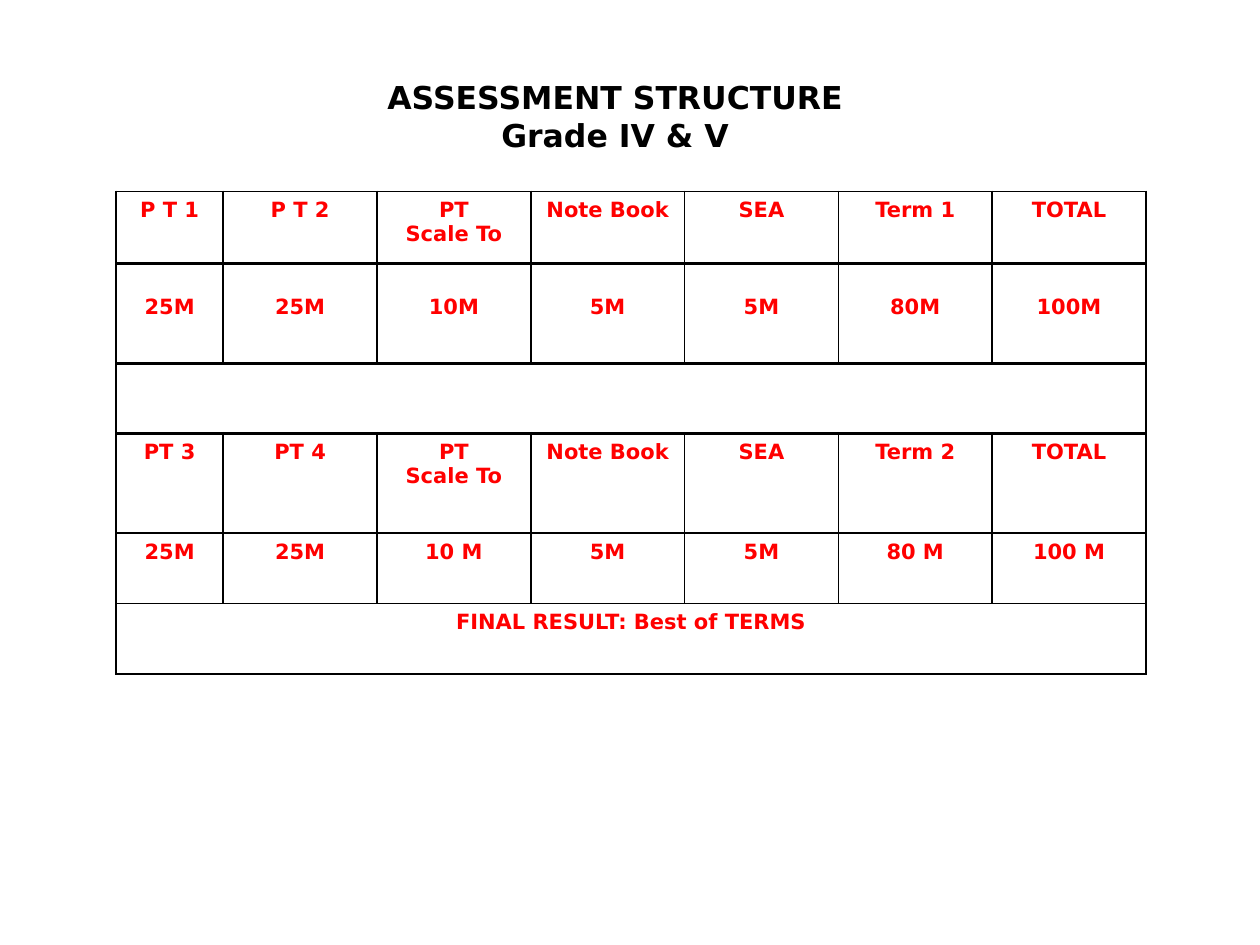
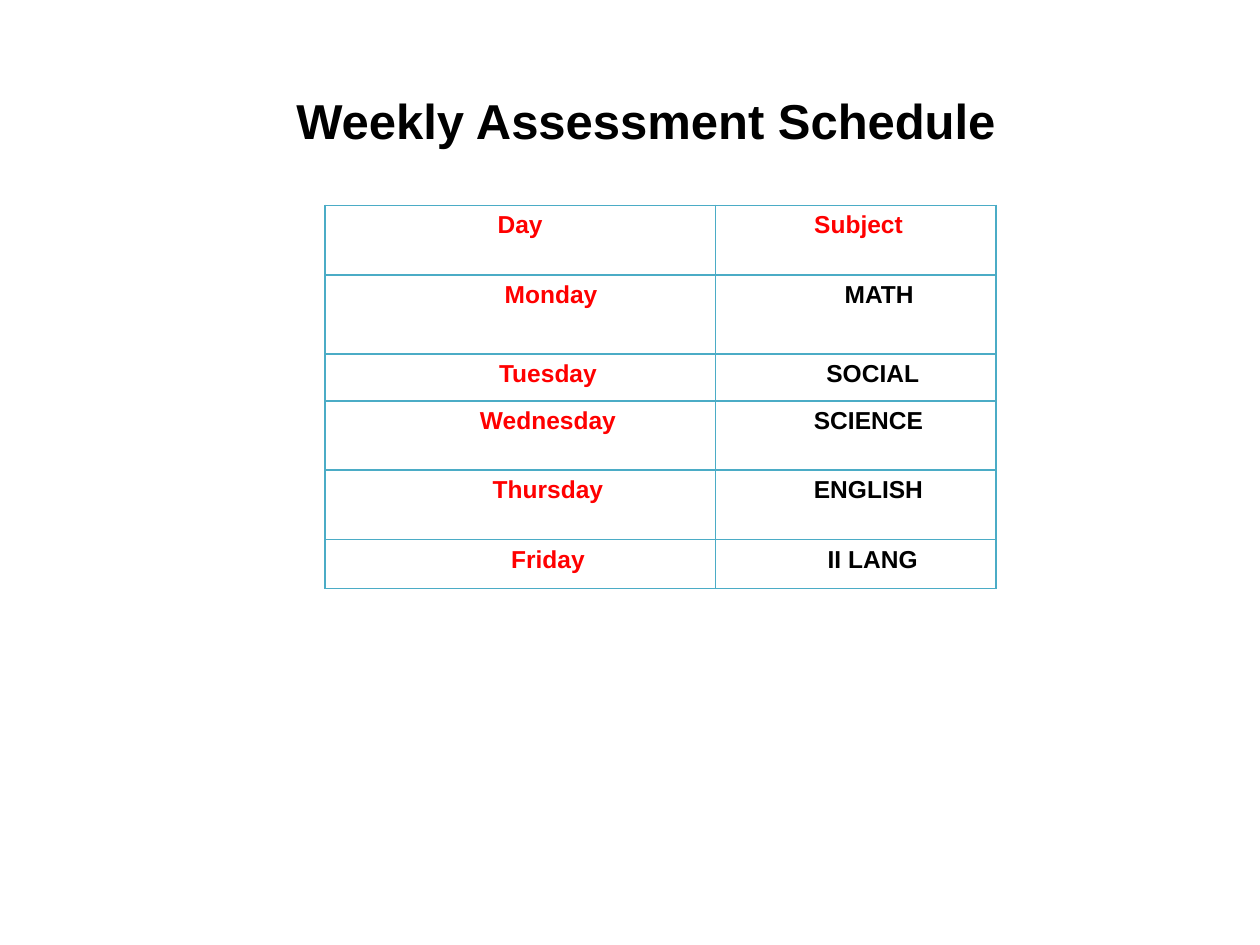
from lxml.etree import SubElement
from pptx import Presentation
from pptx.dml.color import RGBColor
from pptx.enum.text import PP_ALIGN as Align
from pptx.oxml.ns import qn
from pptx.util import Cm, Pt

BLACK, RED, TEAL = "000000", "FF0000", "4BACC6"
MARGIN = 0.25


def rgb(value):
    return RGBColor.from_string(value)


class Deck:
    def __init__(self):
        self.prs = Presentation()
        self.prs.slide_width, self.prs.slide_height = Cm(25.4), Cm(19.05)

    def new_slide(self, font):
        self.s = self.prs.slides.add_slide(self.prs.slide_layouts[6])
        self.font = font

    def set_text(self, tf, text, size, color):
        tf.text = text
        for p in tf.paragraphs:
            p.alignment = Align.CENTER
            for r in p.runs:
                r.font.name, r.font.size, r.font.bold = self.font, Pt(size), True
                r.font.color.rgb = rgb(color)

    def title(self, text, box, size):
        tf = self.s.shapes.add_textbox(*map(Cm, box)).text_frame
        tf.word_wrap = True
        self.set_text(tf, text, size, BLACK)

    def table(self, left, top, widths, heights):
        """Add an unfilled table without style bands."""
        tbl = self.s.shapes.add_table(
            len(heights), len(widths), Cm(left), Cm(top),
            Cm(sum(widths)), Cm(sum(heights))).table
        tbl.first_row = tbl.horz_banding = False
        for col, width in zip(tbl.columns, widths):
            col.width = Cm(width)
        for row, height in zip(tbl.rows, heights):
            row.height = Cm(height)
        return tbl

    def rule(self, tbl, color, heavy=()):
        """Draw 1 pt cell borders; horizontal lines numbered in heavy get 2 pt."""
        for i, row in enumerate(tbl.rows):
            widths = {"L": 1, "R": 1, "T": 2 if i in heavy else 1,
                      "B": 2 if i + 1 in heavy else 1}
            for cell in row.cells:
                tc_pr = cell._tc.get_or_add_tcPr()
                for side, width in widths.items():
                    ln = SubElement(tc_pr, qn(f"a:ln{side}"), w=str(Pt(width)))
                    fill = SubElement(ln, qn("a:solidFill"))
                    SubElement(fill, qn("a:srgbClr"), val=color)
                cell.fill.background()

    def cell(self, cell, text, size, color, indent=0, drop=0):
        """Fill in a centred cell, shifted right by indent and down by drop."""
        if indent:
            cell.margin_left = Cm(MARGIN + indent)
        if drop:
            cell.margin_top = Cm(0.13 + drop)
        self.set_text(cell.text_frame, text, size, color)


def assessment_structure(deck):
    deck.new_slide("DejaVu Sans")
    deck.title("ASSESSMENT STRUCTURE\nGrade IV & V", (2.34, 1.45, 20.12, 3.23), 18)
    tbl = deck.table(2.34, 3.86, [2.16] + [3.1] * 6,
                     [1.45, 2.01, 1.42, 2.01, 1.42, 1.42])
    shared = ["PT\nScale To", "Note Book", "SEA"]
    rows = {
        0: ["P T 1", "P T 2", *shared, "Term 1", "TOTAL"],
        1: ["25M", "25M", "10M", "5M", "5M", "80M", "100M"],
        3: ["PT 3", "PT 4", *shared, "Term 2", "TOTAL"],
        4: ["25M", "25M", "10 M", "5M", "5M", "80 M", "100 M"],
        5: ["FINAL RESULT: Best of TERMS"],
    }
    for i in (2, 5):
        tbl.cell(i, 0).merge(tbl.cell(i, 6))
    for i, texts in rows.items():
        for j, text in enumerate(texts):
            deck.cell(tbl.cell(i, j), text, 12, RED, drop=0.5 if i == 1 else 0)
    deck.rule(tbl, BLACK, heavy=(1, 2, 3))


def weekly_schedule(deck):
    deck.new_slide("Arial")
    deck.title("Weekly Assessment Schedule", (3.81, 1.7, 18.42, 1.45), 28)
    tbl = deck.table(6.55, 4.14, [7.87, 5.66], [1.4, 1.6, 0.94, 1.4, 1.4, 0.99])
    schedule = [
        ("Day", 0, "Subject", 0.12),
        ("Monday", 1.25, "MATH", 0.95),
        ("Tuesday", 1.13, "SOCIAL", 0.69),
        ("Wednesday", 1.13, "SCIENCE", 0.52),
        ("Thursday", 1.13, "ENGLISH", 0.52),
        ("Friday", 1.13, "II LANG", 0.69),
    ]
    for i, (day, day_indent, subject, subject_indent) in enumerate(schedule):
        deck.cell(tbl.cell(i, 0), day, 14, RED, day_indent)
        deck.cell(tbl.cell(i, 1), subject, 14, BLACK if i else RED, subject_indent)
    deck.rule(tbl, TEAL)


def main():
    deck = Deck()
    assessment_structure(deck)
    weekly_schedule(deck)
    deck.prs.save("out.pptx")


if __name__ == "__main__":
    main()
